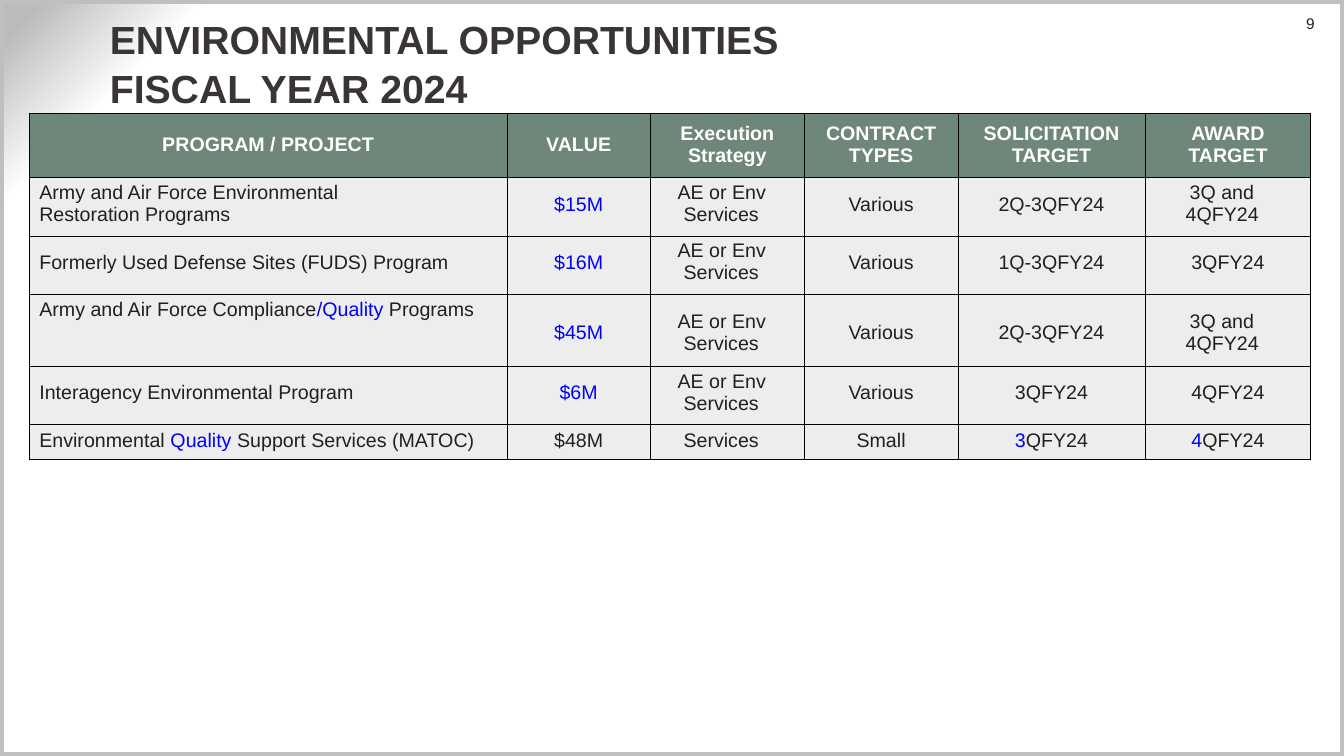
from dataclasses import dataclass

from lxml.etree import SubElement
from pptx import Presentation
from pptx.dml.color import RGBColor
from pptx.enum.text import MSO_ANCHOR, PP_ALIGN
from pptx.enum.shapes import MSO_SHAPE
from pptx.oxml import parse_xml
from pptx.oxml.ns import nsdecls, qn
from pptx.util import Pt

PX = 9144
SLIDE_WIDTH, SLIDE_HEIGHT = 1333, 750
FONT = "Arial"
INK, BLUE, WHITE, BLACK = "211F1F", "0000FF", "FFFFFF", "000000"
GREEN, LIGHT_GRAY = "6E8778", "EDEDED"

COLUMN_WIDTHS = [474, 142, 153, 152, 186, 164]
HEADER_HEIGHT = 64
HEADERS = ["PROGRAM / PROJECT", "VALUE", "Execution Strategy",
           "CONTRACT TYPES", "SOLICITATION TARGET", "AWARD TARGET"]

STRATEGY = "AE or Env Services"
TWO_QUARTERS = "3Q and 4QFY24"
INDENTS = {STRATEGY: (33, -6), TWO_QUARTERS: (40, 4), "Services": (33, 0)}


@dataclass
class Program:
    """One table row; asterisks enclose its blue text."""
    height: int
    name_top: int
    indented_top: int
    centered_top: int
    cells: list
    name_right: int = 0


PROGRAMS = [
    Program(58, 4, 4, 16, ["Army and Air Force Environmental Restoration Programs", "*$15M*",
                           STRATEGY, "Various", "2Q-3QFY24", TWO_QUARTERS], name_right=100),
    Program(58, 16, 4, 16, ["Formerly Used Defense Sites (FUDS) Program", "*$16M*",
                            STRATEGY, "Various", "1Q-3QFY24", "3QFY24"]),
    Program(71, 4, 16, 27, ["Army and Air Force Compliance*/Quality* Programs", "*$45M*",
                            STRATEGY, "Various", "2Q-3QFY24", TWO_QUARTERS]),
    Program(58, 16, 5, 16, ["Interagency Environmental Program", "*$6M*",
                            STRATEGY, "Various", "3QFY24", "4QFY24"]),
    Program(35, 5, 5, 5, ["Environmental *Quality* Support Services (MATOC)", "$48M",
                          "Services", "Small", "*3*QFY24", "*4*QFY24"]),
]


def color(hex_string):
    """Turn a hex string into a color."""
    return RGBColor.from_string(hex_string)


def box_in_px(*lengths):
    """Scale px lengths to EMU."""
    return [length * PX for length in lengths]


def style_font(font, size, hex_string, bold=False):
    """Set the typeface, size, color and weight."""
    font.name = FONT
    font.size = Pt(size)
    font.bold = bold
    font.color.rgb = color(hex_string)


def set_margins(target, left, top, right, bottom):
    """Set the inner margins of a text frame or cell."""
    (target.margin_left, target.margin_top,
     target.margin_right, target.margin_bottom) = box_in_px(left, top, right, bottom)


def add_background(slide):
    """Fill the slide with white that shades to gray in the top left corner."""
    stops = "".join(
        f'<a:gs pos="{position}000"><a:srgbClr val="{shade}"/></a:gs>'
        for position, shade in [(87, WHITE), (90, WHITE), (98, "BBBBBC")])
    background = parse_xml(
        f'<p:bg {nsdecls("p", "a")}><p:bgPr><a:gradFill rotWithShape="1"><a:gsLst>{stops}</a:gsLst>'
        '<a:path path="circle"><a:fillToRect l="100000" t="100000"/></a:path>'
        '</a:gradFill><a:effectLst/></p:bgPr></p:bg>')
    slide.element.cSld.insert(0, background)


def add_frame(slide, left, top, width, height):
    """Outline the box with a gray border."""
    shape = slide.shapes.add_shape(MSO_SHAPE.RECTANGLE, *box_in_px(left, top, width, height))
    shape.shadow.inherit = False
    shape.fill.background()
    shape.line.color.rgb = color("BFBFC2")
    shape.line.width = Pt(6)


def add_text(slide, box, text, margins, size, hex_string, bold=False):
    """Add a text box and return its text frame."""
    text_frame = slide.shapes.add_textbox(*box_in_px(*box)).text_frame
    text_frame.word_wrap = True
    set_margins(text_frame, *margins)
    paragraph = text_frame.paragraphs[0]
    paragraph.text = text
    for run in paragraph.runs:
        style_font(run.font, size, hex_string, bold)
    return text_frame


def add_page_number(slide, left, top, width, height):
    """Place the page number, aligned right."""
    text_frame = add_text(slide, (left, top, width, height), "9", (10, 0, 0, 0), 11, "221F20")
    text_frame.paragraphs[0].alignment = PP_ALIGN.RIGHT


def add_title(slide, left, top, width, height):
    """Place the two-line title."""
    text_frame = add_text(slide, (left, top, width, height),
                          "ENVIRONMENTAL OPPORTUNITIES\vFISCAL YEAR 2024",
                          (5, 0, 5, 0), 28, "393436", bold=True)
    text_frame.vertical_anchor = MSO_ANCHOR.MIDDLE
    text_frame.paragraphs[0].line_spacing = 1.04


def style_cell(cell, fill):
    """Give a cell thin black borders and a solid fill."""
    properties = cell._tc.get_or_add_tcPr()
    for side in ("lnL", "lnR", "lnT", "lnB"):
        line = SubElement(properties, qn(f"a:{side}"), w=str(Pt(0.25)))
        solid = SubElement(line, qn("a:solidFill"))
        SubElement(solid, qn("a:srgbClr"), val=BLACK)
    cell.fill.solid()
    cell.fill.fore_color.rgb = color(fill)


def fill_header_cell(cell, text):
    """Write a centered column heading."""
    style_cell(cell, GREEN)
    set_margins(cell, 10, 5, 10, 5)
    cell.vertical_anchor = MSO_ANCHOR.MIDDLE
    paragraph = cell.text_frame.paragraphs[0]
    paragraph.text = text
    paragraph.alignment = PP_ALIGN.CENTER
    style_font(paragraph.runs[0].font, 14, WHITE, bold=True)


def fill_program_cell(cell, text, top, right=0, indents=None):
    """Write a body cell, centered unless indents are given."""
    style_cell(cell, LIGHT_GRAY)
    set_margins(cell, 0, top, right, 0)
    paragraph = cell.text_frame.paragraphs[0]
    if indents:
        properties = paragraph._p.get_or_add_pPr()
        for name, length in zip(("marL", "indent"), indents):
            properties.set(name, str(length * PX))
    else:
        paragraph.alignment = PP_ALIGN.CENTER
    for index, part in enumerate(text.split("*")):
        if part:
            run = paragraph.add_run()
            run.text = part
            style_font(run.font, 14, BLUE if index % 2 else INK)


def add_program_table(slide, left, top):
    """Place the table of programs with its corner at left and top."""
    heights = [HEADER_HEIGHT] + [program.height for program in PROGRAMS]
    box = box_in_px(left, top, sum(COLUMN_WIDTHS), sum(heights))
    table = slide.shapes.add_table(len(heights), len(COLUMN_WIDTHS), *box).table
    for column, width in zip(table.columns, COLUMN_WIDTHS):
        column.width = width * PX
    for row, height in zip(table.rows, heights):
        row.height = height * PX
    for column_index, text in enumerate(HEADERS):
        fill_header_cell(table.cell(0, column_index), text)
    for row_index, program in enumerate(PROGRAMS, start=1):
        name, *details = program.cells
        fill_program_cell(table.cell(row_index, 0), name, program.name_top,
                          program.name_right, (10, 0))
        for column_index, text in enumerate(details, start=1):
            indents = INDENTS.get(text)
            cell_top = program.indented_top if indents else program.centered_top
            fill_program_cell(table.cell(row_index, column_index), text, cell_top, indents=indents)


def main():
    """Build and save the slide."""
    presentation = Presentation()
    presentation.slide_width, presentation.slide_height = box_in_px(SLIDE_WIDTH, SLIDE_HEIGHT)
    slide = presentation.slides.add_slide(presentation.slide_layouts[6])
    add_background(slide)
    add_page_number(slide, 1244, 14, 60, 19)
    add_frame(slide, 0, 0, SLIDE_WIDTH, SLIDE_HEIGHT)
    add_title(slide, 104, 16, 1136, 91)
    add_program_table(slide, 29, 112)
    presentation.save("out.pptx")


if __name__ == "__main__":
    main()
